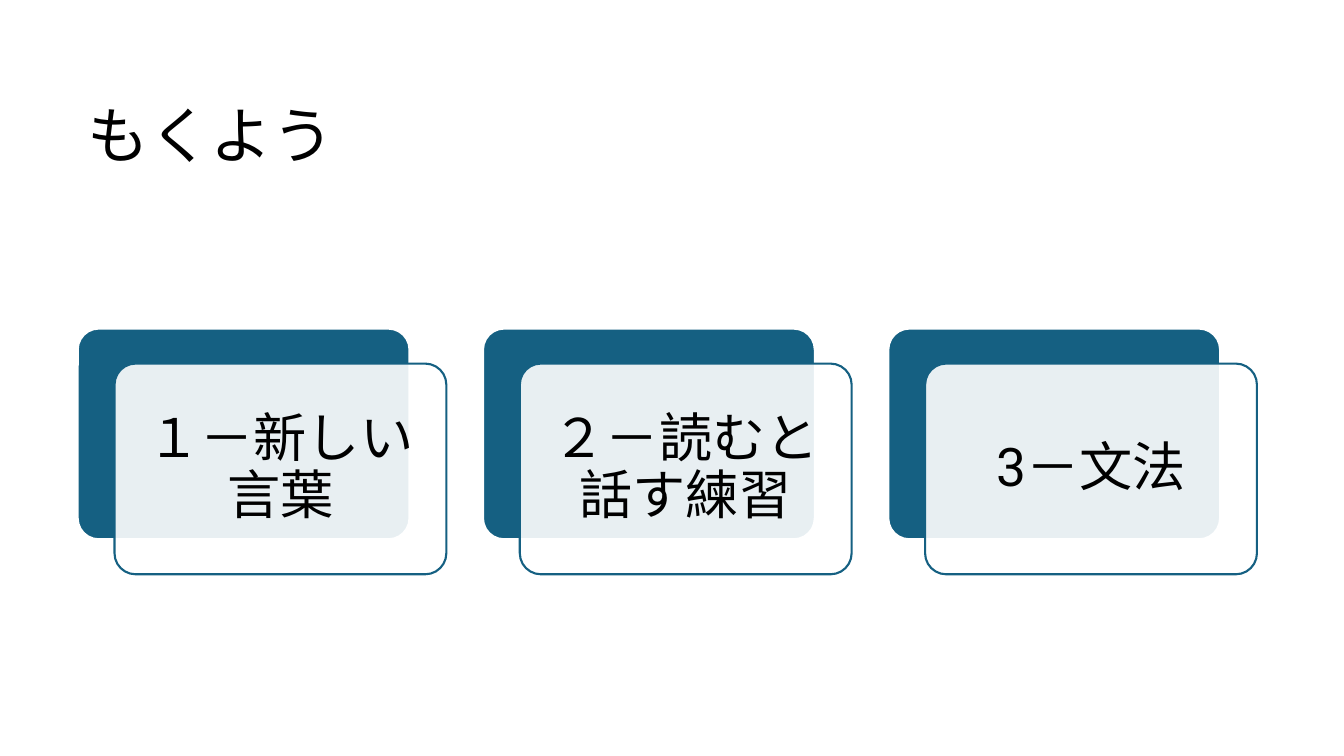
from dataclasses import dataclass

from lxml import etree
from pptx import Presentation
from pptx import util as u
from pptx.dml.color import RGBColor
from pptx.enum import shapes, text
from pptx.oxml.ns import qn


@dataclass(frozen=True)
class Theme:
    font: str = "Roboto"
    ink: RGBColor = RGBColor(0x00, 0x00, 0x00)
    paper: RGBColor = RGBColor(0xFF, 0xFF, 0xFF)
    accent: RGBColor = RGBColor(0x15, 0x60, 0x82)
    title_size: int = 44
    card_size: int = 38
    outline: float = 1.5
    corner: float = 0.1
    card_opacity: int = 90


class SlideBuilder:
    def __init__(self, slide, theme):
        self.slide = slide
        self.theme = theme

    def style_paragraph(self, paragraph, size, alignment):
        paragraph.alignment = alignment
        paragraph.line_spacing = 0.9
        paragraph.font.name = self.theme.font
        paragraph.font.size = u.Pt(size)
        paragraph.font.color.rgb = self.theme.ink

    def title(self, wording, left, top, width, height):
        shape = self.slide.shapes.title
        shape.left, shape.top = u.Pt(left), u.Pt(top)
        shape.width, shape.height = u.Pt(width), u.Pt(height)
        frame = shape.text_frame
        frame.text = wording
        frame.vertical_anchor = text.MSO_ANCHOR.TOP
        frame.auto_size = text.MSO_AUTO_SIZE.NONE
        self.style_paragraph(frame.paragraphs[0], self.theme.title_size, text.PP_ALIGN.LEFT)

    def panel(self, group, left, top, width, height, fill, line):
        shape = group.shapes.add_shape(
            shapes.MSO_SHAPE.ROUNDED_RECTANGLE,
            u.Pt(left), u.Pt(top), u.Pt(width), u.Pt(height))
        shape.adjustments[0] = self.theme.corner
        shape.shadow.inherit = False
        shape.fill.solid()
        shape.fill.fore_color.rgb = fill
        shape.line.color.rgb = line
        shape.line.width = u.Pt(self.theme.outline)
        return shape

    def set_opacity(self, shape, percent):
        color = shape.fill._xPr.find(qn("a:solidFill"))[0]
        etree.SubElement(color, qn("a:alpha")).set("val", str(percent * 1000))

    def card(self, group, wording, left, top, width, height, shift):
        theme = self.theme
        # Solid panel behind
        self.panel(group, left, top, width, height, theme.accent, theme.paper)
        # Translucent panel in front, carrying the text
        front = self.panel(group, left + shift[0], top + shift[1], width, height,
                           theme.paper, theme.accent)
        self.set_opacity(front, theme.card_opacity)
        frame = front.text_frame
        frame.text = wording
        frame.word_wrap = True
        frame.vertical_anchor = text.MSO_ANCHOR.MIDDLE
        frame.margin_left = frame.margin_right = u.Pt(11.5)
        frame.margin_top = frame.margin_bottom = u.Pt(11.5)
        self.style_paragraph(frame.paragraphs[0], theme.card_size, text.PP_ALIGN.CENTER)


def main():
    presentation = Presentation()
    presentation.slide_width, presentation.slide_height = u.Pt(960), u.Pt(540)
    slide = presentation.slides.add_slide(presentation.slide_layouts[5])
    builder = SlideBuilder(slide, Theme())

    # Title
    left = 55.5
    builder.title("もくよう", left, 71.5, 842, 90.5)

    # Row of agenda cards
    card_pitch = 289.5
    group = slide.shapes.add_group_shape()
    for index, wording in enumerate(["１－新しい言葉", "２－読むと話す練習", "3－文法"]):
        builder.card(group, wording, left + index * card_pitch, 234.7, 237, 150.5,
                     shift=(26.3, 25))

    presentation.save("out.pptx")


if __name__ == "__main__":
    main()
